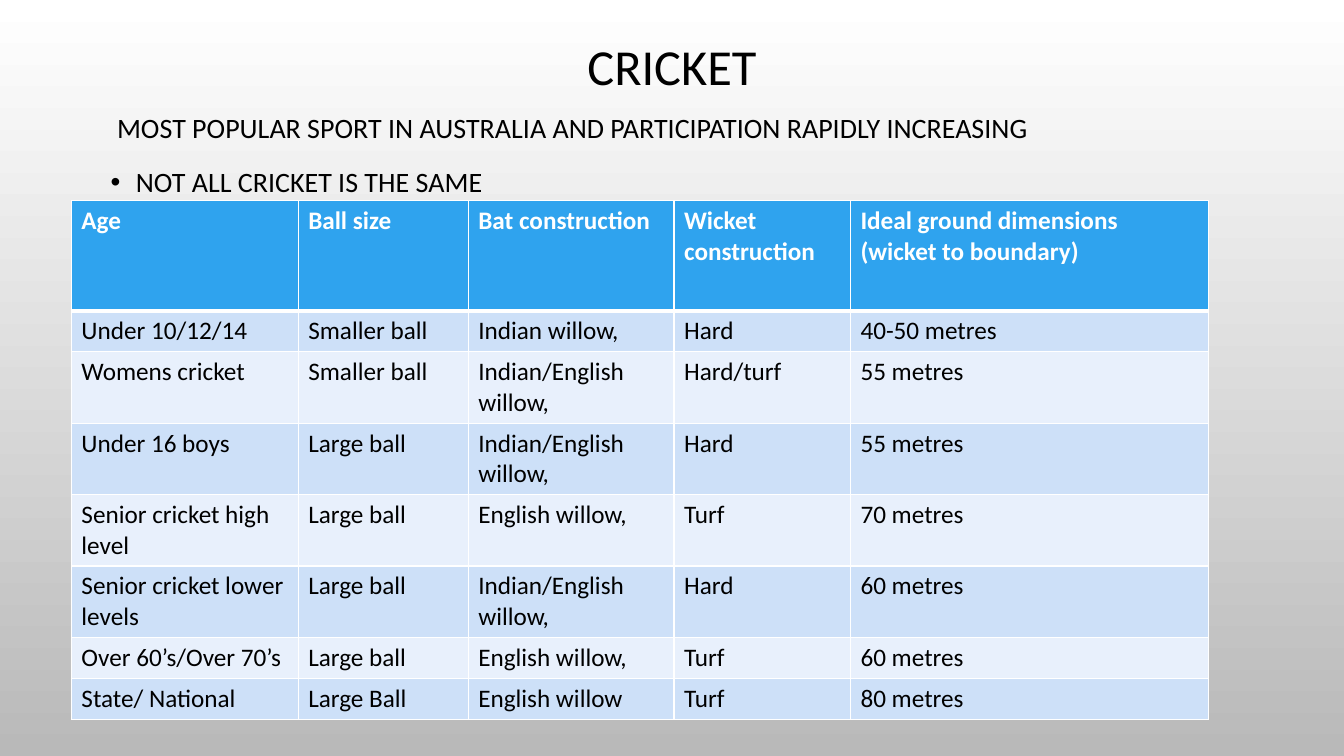
from pptx import Presentation
from pptx.dml.color import RGBColor
from pptx.enum.text import MSO_ANCHOR, MSO_AUTO_SIZE, PP_ALIGN
from pptx.oxml.ns import qn
from pptx.util import Pt
from lxml.etree import SubElement

PX = 9525  # EMU in one px
FONT = "Calibri"
COLORS = {
    "text": "000000",
    "white": "FFFFFF",
    "shade": "B9B9B9",
    "header": "2FA3EE",
    "odd": "CDE0F8",
    "even": "E8F0FC",
}
COL_WIDTHS = [216, 162, 196, 168, 341]
ROW_HEIGHTS = [105, 39, 68, 68, 68, 68, 39, 39]
ROWS = [
    ["Age", "Ball size", "Bat construction", "Wicket construction",
     "Ideal ground dimensions (wicket to boundary)"],
    ["Under 10/12/14", "Smaller ball", "Indian willow,", "Hard", "40-50 metres"],
    ["Womens cricket", "Smaller ball", "Indian/English willow,", "Hard/turf", "55 metres"],
    ["Under 16 boys", "Large ball", "Indian/English willow,", "Hard", "55 metres"],
    ["Senior cricket high level", "Large ball", "English willow,", "Turf", "70 metres"],
    ["Senior cricket lower levels", "Large ball", "Indian/English willow,", "Hard", "60 metres"],
    ["Over 60’s/Over 70’s", "Large ball", "English willow,", "Turf", "60 metres"],
    ["State/ National", "Large Ball", "English willow", "Turf", "80 metres"],
]


def px(*lengths):
    return [n * PX for n in lengths]


def rgb(name):
    return RGBColor.from_string(COLORS[name])


def add_run(p, text, size, color="text", bold=False):
    r = p.add_run()
    r.text = text
    r.font.name = FONT
    r.font.size = Pt(size)
    r.font.bold = bold
    r.font.color.rgb = rgb(color)


def set_background(s):
    fill = s.background.fill
    fill.gradient()
    fill.gradient_angle = 270  # counter-clockwise, so top to bottom
    for stop, name in zip(fill.gradient_stops, ("white", "shade")):
        stop.color.rgb = rgb(name)


def set_title(s, text):
    sp = s.shapes.title
    sp.left, sp.top, sp.width, sp.height = px(96, 20, 1088, 91)
    tf = sp.text_frame
    tf.auto_size = MSO_AUTO_SIZE.NONE
    tf.vertical_anchor = MSO_ANCHOR.MIDDLE
    p = tf.paragraphs[0]
    p.alignment = PP_ALIGN.CENTER
    p.line_spacing = 0.9
    add_run(p, text, 36)


def set_indent(p, left, first=0, bullet=None):
    pPr = p._p.get_or_add_pPr()
    pPr.set("marL", str(left * PX))
    pPr.set("indent", str(first * PX))
    if bullet:
        SubElement(pPr, qn("a:buFont"), typeface="Arial")
        SubElement(pPr, qn("a:buChar"), char=bullet)


def add_intro(s, lead, point):
    tf = s.shapes.add_textbox(*px(96, 94, 1088, 514)).text_frame
    tf.word_wrap = True
    p = tf.paragraphs[0]
    p.line_spacing = 1.2
    set_indent(p, 6)
    add_run(p, lead, 20)
    p = tf.add_paragraph()
    p.line_spacing = 1.2
    p.space_before = Pt(10)
    set_indent(p, 24, -24, "•")
    add_run(p, point, 20)


def set_borders(cell, top, bottom):
    tcPr = cell._tc.get_or_add_tcPr()
    for side, width in (("L", 1), ("R", 1), ("T", top), ("B", bottom)):
        ln = SubElement(tcPr, qn(f"a:ln{side}"), w=str(Pt(width)))
        fill = SubElement(ln, qn("a:solidFill"))
        SubElement(fill, qn("a:srgbClr"), val=COLORS["white"])


def add_cricket_table(s):
    frame = s.shapes.add_table(len(ROWS), len(COL_WIDTHS),
                               *px(68, 191, sum(COL_WIDTHS), sum(ROW_HEIGHTS)))
    table = frame.table
    for col, width in zip(table.columns, COL_WIDTHS):
        col.width = width * PX
    for row, height in zip(table.rows, ROW_HEIGHTS):
        row.height = height * PX
    for i, texts in enumerate(ROWS):
        head = i == 0
        fill = "header" if head else "odd" if i % 2 else "even"
        for j, text in enumerate(texts):
            cell = table.cell(i, j)
            # Borders come before the fill in the cell properties
            set_borders(cell, 3 if i == 1 else 1, 3 if head else 1)
            cell.fill.solid()
            cell.fill.fore_color.rgb = rgb(fill)
            add_run(cell.text_frame.paragraphs[0], text, 18,
                    "white" if head else "text", head)


def main():
    prs = Presentation()
    prs.slide_width, prs.slide_height = px(1280, 720)
    s = prs.slides.add_slide(prs.slide_layouts[5])
    set_background(s)
    # Heading and introduction
    set_title(s, "CRICKET")
    add_intro(s, "MOST POPULAR SPORT IN AUSTRALIA AND PARTICIPATION RAPIDLY INCREASING",
              "NOT ALL CRICKET IS THE SAME")
    # Equipment and ground by age group
    add_cricket_table(s)
    prs.save("out.pptx")


if __name__ == "__main__":
    main()
